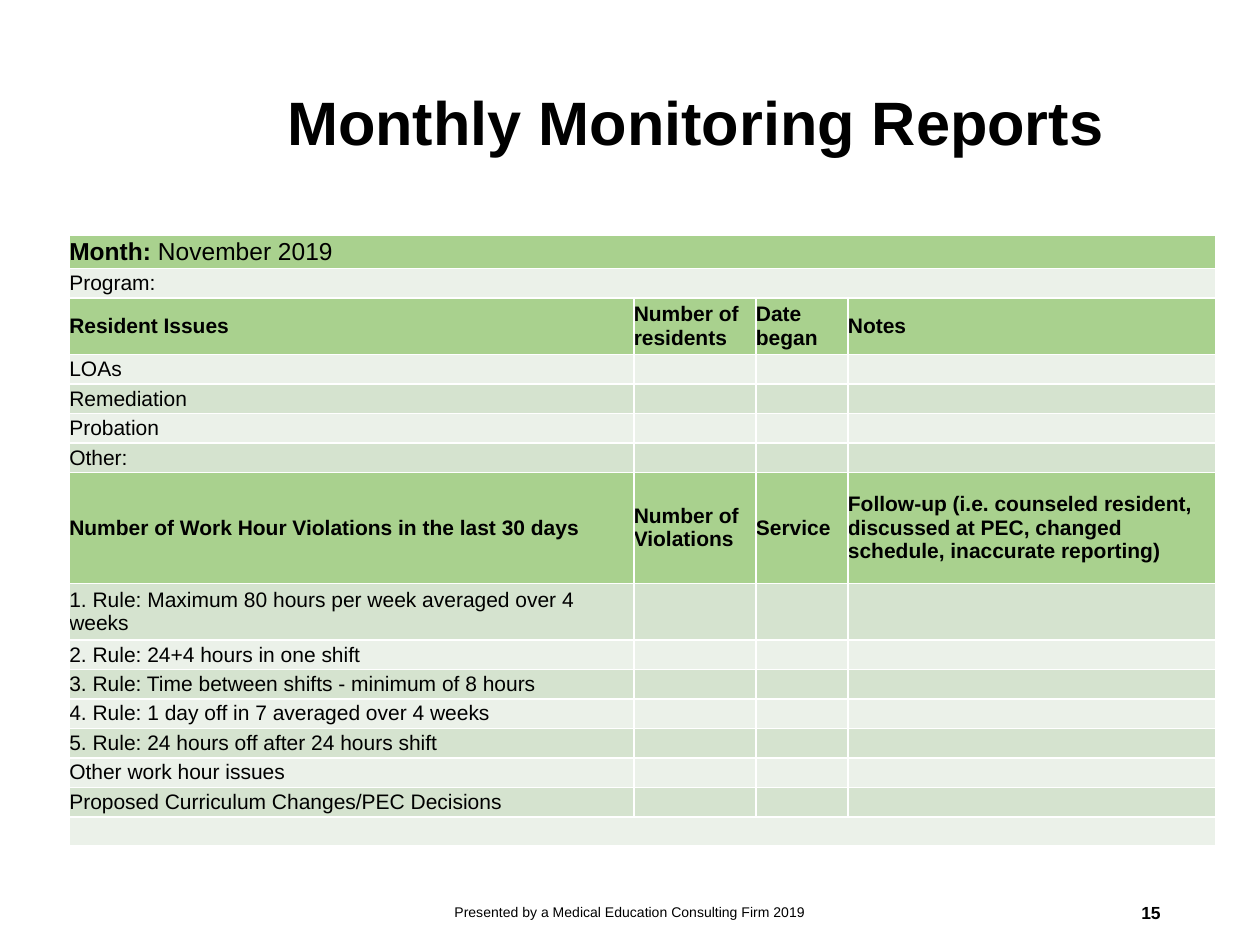
from dataclasses import dataclass

from lxml.etree import SubElement
from pptx import Presentation
from pptx.dml.color import RGBColor
from pptx.enum.text import MSO_ANCHOR as Anchor, PP_ALIGN as Align
from pptx.oxml.ns import qn
from pptx.util import Inches, Pt

BLACK = RGBColor(0x00, 0x00, 0x00)
WHITE = RGBColor(0xFF, 0xFF, 0xFF)
HEADER_GREEN = RGBColor(0xA9, 0xD1, 0x8E)
LIGHT_BAND = RGBColor(0xEB, 0xF1, 0xE9)
DARK_BAND = RGBColor(0xD5, 0xE3, 0xCF)
FONT = "Arial"
BODY_SIZE = 12

TABLE_LEFT, TABLE_TOP, TABLE_HEIGHT = 0.55, 1.87, 4.85
COLUMN_WIDTHS = (4.48, 0.97, 0.73, 2.92)


@dataclass(frozen=True)
class Span:
    text: str
    size: float = BODY_SIZE
    bold: bool = False


@dataclass(frozen=True)
class Label:
    span: Span
    left: float
    top: float
    width: float
    height: float
    align: Align
    inset: float = 0.05
    line_spacing: float = 1.0


@dataclass(frozen=True)
class ReportRow:
    cells: tuple[tuple[Span, ...], ...] = ()
    height: float | None = None
    header: bool = False
    merged: bool = False


def heading(height: float, *titles: str) -> ReportRow:
    return ReportRow(tuple((Span(title, bold=True),) for title in titles), height, header=True)


def entry(text: str, height: float | None = None) -> ReportRow:
    return ReportRow(((Span(text),),), height)


LABELS = (
    Label(Span("Monthly Monitoring Reports", 35, True), 2.18, 0.27, 7.14, 1.45,
          Align.LEFT, inset=0.1, line_spacing=0.9),
    Label(Span("15", 10, True), 7.06, 7.04, 2.25, 0.4, Align.RIGHT),
    Label(Span("Presented by a Medical Education Consulting Firm 2019", 8),
          3.31, 7.04, 3.38, 0.4, Align.CENTER),
)

ROWS = (
    ReportRow(((Span("Month: ", 14, True), Span("November 2019", 14)),), 0.26,
              header=True, merged=True),
    ReportRow(((Span("Program:"),),), merged=True),
    heading(0.45, "Resident Issues", "Number of residents", "Date began", "Notes"),
    entry("LOAs"),
    entry("Remediation"),
    entry("Probation"),
    entry("Other:"),
    heading(0.88, "Number of Work Hour Violations in the last 30 days",
            "Number of Violations", "Service",
            "Follow-up (i.e. counseled resident, discussed at PEC, changed schedule, "
            "inaccurate reporting)"),
    entry("1. Rule: Maximum 80 hours per week averaged over 4 weeks", 0.45),
    entry("2. Rule: 24+4 hours in one shift"),
    entry("3. Rule: Time between shifts - minimum of 8 hours"),
    entry("4. Rule: 1 day off in 7 averaged over 4 weeks"),
    entry("5. Rule: 24 hours off after 24 hours shift"),
    entry("Other work hour issues"),
    entry("Proposed Curriculum Changes/PEC Decisions"),
    ReportRow(merged=True),
)


def add_span(para, span: Span) -> None:
    run = para.add_run()
    run.text = span.text
    run.font.name = FONT
    run.font.size = Pt(span.size)
    run.font.bold = span.bold
    run.font.color.rgb = BLACK


def add_label(page, label: Label) -> None:
    box = page.shapes.add_textbox(Inches(label.left), Inches(label.top),
                                  Inches(label.width), Inches(label.height))
    frame = box.text_frame
    frame.word_wrap = True
    frame.vertical_anchor = Anchor.MIDDLE
    frame.margin_left = frame.margin_right = Inches(0.1)
    frame.margin_top = frame.margin_bottom = Inches(label.inset)
    para = frame.paragraphs[0]
    para.alignment = label.align
    para.line_spacing = label.line_spacing
    add_span(para, label.span)


def add_borders(cell) -> None:
    properties = cell._tc.get_or_add_tcPr()
    for side in ("L", "R", "T", "B"):
        line = SubElement(properties, qn(f"a:ln{side}"), w=str(Pt(1)))
        fill = SubElement(line, qn("a:solidFill"))
        SubElement(fill, qn("a:srgbClr"), val=str(WHITE))


def style_cell(cell, color: RGBColor, spans: tuple[Span, ...]) -> None:
    add_borders(cell)
    cell.fill.solid()
    cell.fill.fore_color.rgb = color
    cell.vertical_anchor = Anchor.MIDDLE
    cell.margin_left = cell.margin_right = cell.margin_top = cell.margin_bottom = 0
    para = cell.text_frame.paragraphs[0]
    para.font.size = Pt(BODY_SIZE)
    for span in spans:
        add_span(para, span)


def add_report(page) -> None:
    fixed = [row.height for row in ROWS if row.height]
    plain_height = (TABLE_HEIGHT - sum(fixed)) / (len(ROWS) - len(fixed))
    table = page.shapes.add_table(
        len(ROWS), len(COLUMN_WIDTHS), Inches(TABLE_LEFT), Inches(TABLE_TOP),
        Inches(sum(COLUMN_WIDTHS)), Inches(TABLE_HEIGHT)).table
    for column, width in zip(table.columns, COLUMN_WIDTHS):
        column.width = Inches(width)
    last = len(COLUMN_WIDTHS) - 1
    for index, row in enumerate(ROWS):
        table.rows[index].height = Inches(row.height or plain_height)
        band = LIGHT_BAND if index % 2 else DARK_BAND
        color = HEADER_GREEN if row.header else band
        for position in range(len(COLUMN_WIDTHS)):
            spans = row.cells[position] if position < len(row.cells) else ()
            style_cell(table.cell(index, position), color, spans)
        if row.merged:
            table.cell(index, 0).merge(table.cell(index, last))


def main() -> None:
    deck = Presentation()
    deck.slide_width, deck.slide_height = Inches(10), Inches(7.5)
    page = deck.slides.add_slide(deck.slide_layouts[6])
    page.background.fill.solid()
    page.background.fill.fore_color.rgb = WHITE
    add_report(page)
    for label in LABELS:
        add_label(page, label)
    deck.save("out.pptx")


if __name__ == "__main__":
    main()
